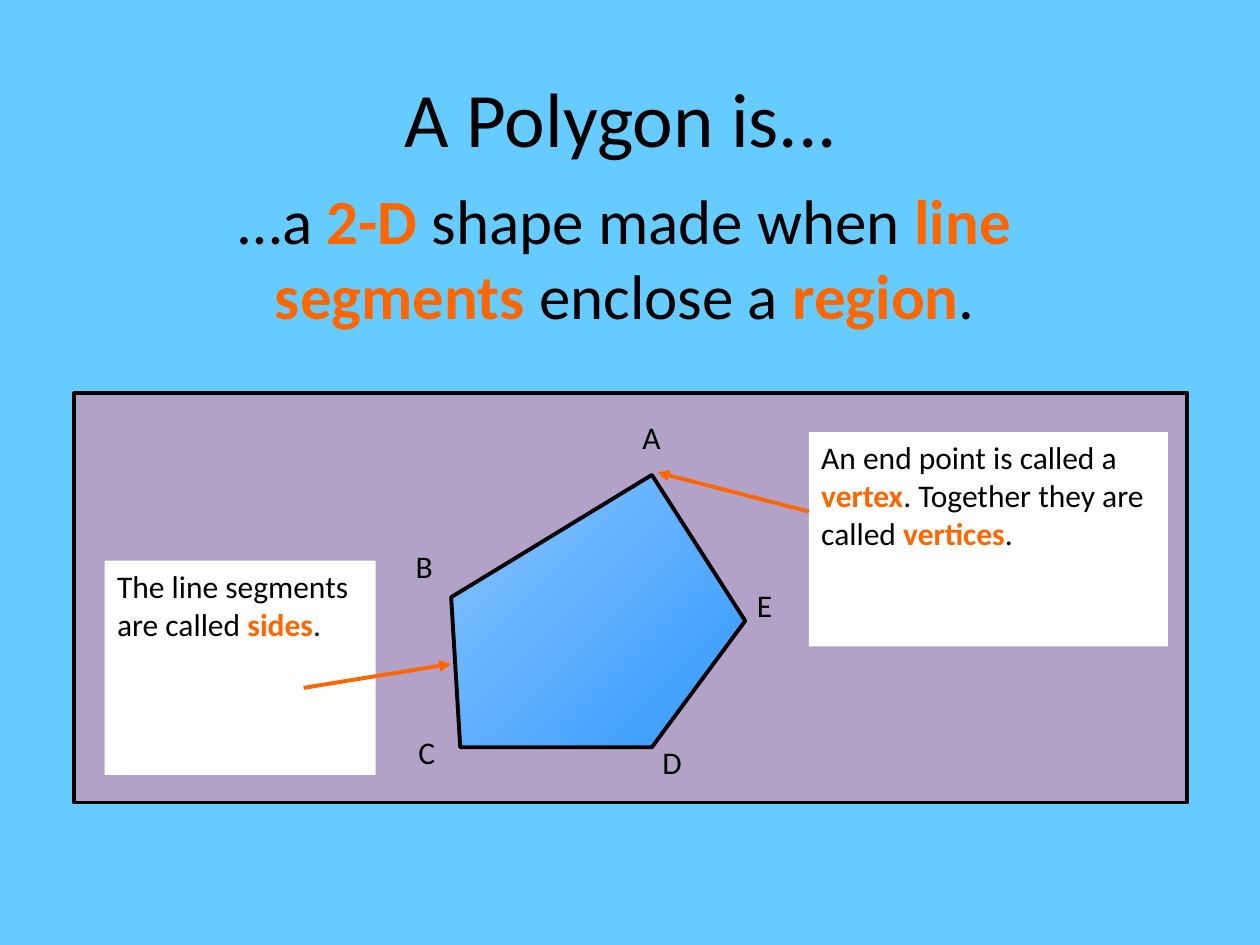
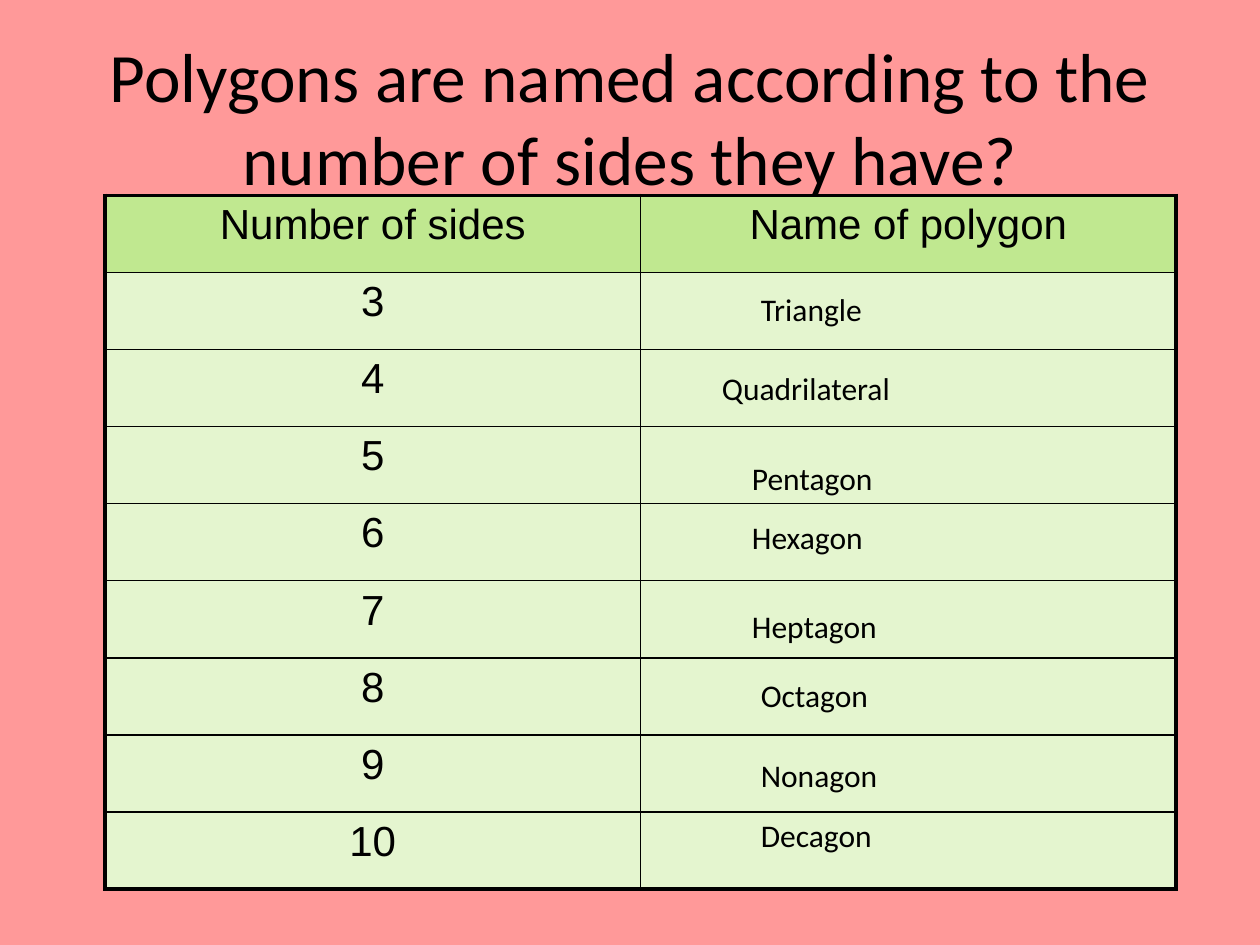
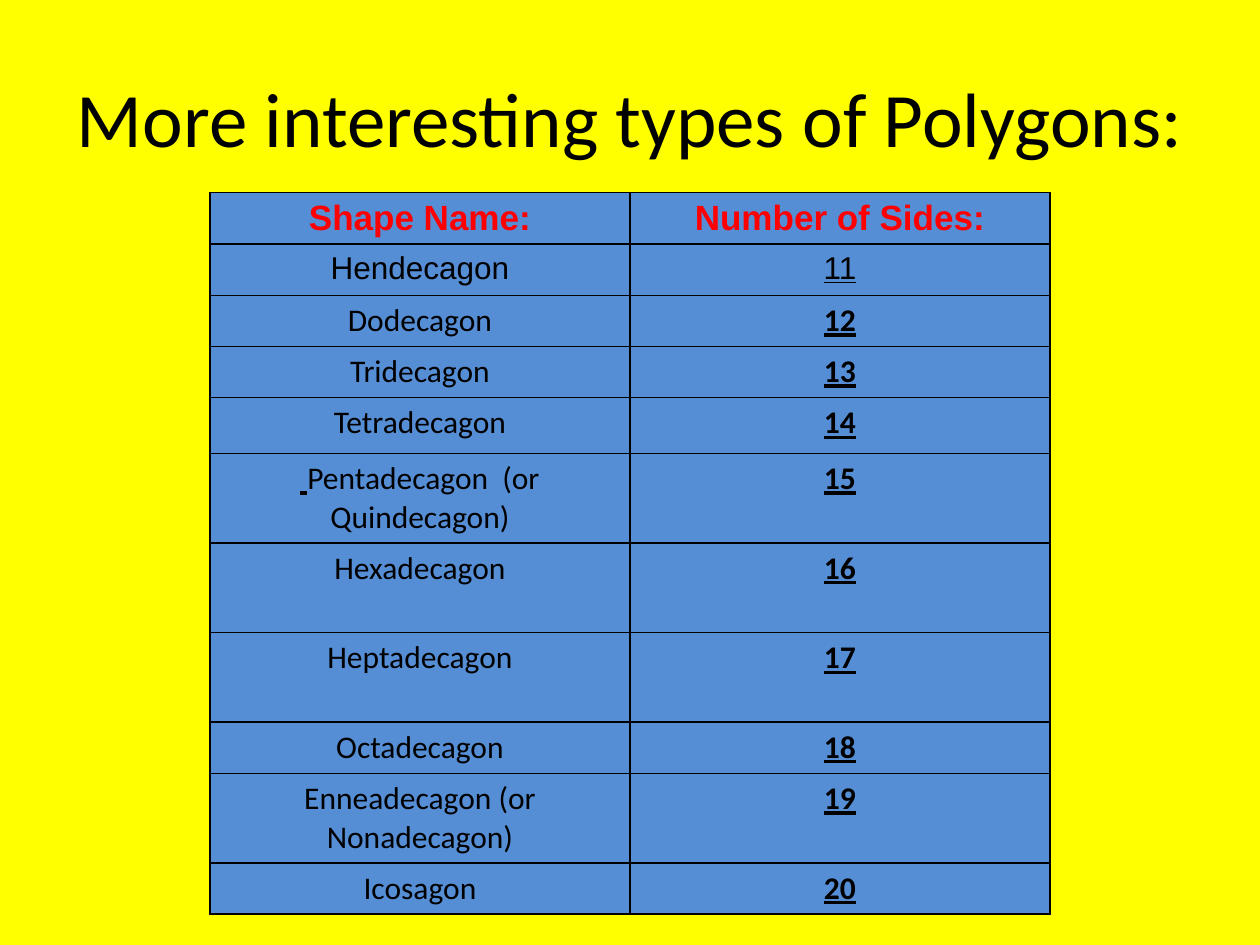
import pptx
import pptx.util
import pptx.dml.color
import pptx.enum.shapes
import pptx.enum.text
import pptx.oxml
import pptx.oxml.ns

Pt = pptx.util.Pt
CENTER = pptx.enum.text.PP_ALIGN.CENTER
LEFT = pptx.enum.text.PP_ALIGN.LEFT

COLORS = {
    "black": "000000", "white": "FFFFFF", "orange": "FF6600", "red": "FF0000",
    "sky": "66CCFF", "pink": "FF9999", "yellow": "FFFF00", "lilac": "B3A2C7",
    "polygon light": "8AC5FF", "polygon dark": "3399FF",
    "green": "C0E890", "pale green": "E4F5CF", "blue": "558ED5",
}
THIN, THICK = 1, 2.25


def rgb(name):
    return pptx.dml.color.RGBColor.from_string(COLORS[name])


def drawing_element(parent, tag, **attributes):
    element = pptx.oxml.parse_xml(f"<a:{tag} {pptx.oxml.ns.nsdecls('a')}/>")
    for key, value in attributes.items():
        element.set(key, str(value))
    parent.append(element)
    return element


class Deck:
    def __init__(self):
        self.presentation = pptx.Presentation()
        self.presentation.slide_width = Pt(720)
        self.presentation.slide_height = Pt(540)
        self.slide = None

    def new_slide(self, background, title, size=44):
        self.slide = self.presentation.slides.add_slide(self.presentation.slide_layouts[5])
        self.slide.background.fill.solid()
        self.slide.background.fill.fore_color.rgb = rgb(background)
        shape = self.slide.shapes.title
        shape.left, shape.top, shape.width, shape.height = Pt(36), Pt(21.6), Pt(648), Pt(90)
        self.fill_text(shape.text_frame, title, size, align=CENTER)
        shape.text_frame.vertical_anchor = pptx.enum.text.MSO_ANCHOR.MIDDLE

    def fill_text(self, text_frame, text, size=18, align=LEFT, wrap=True):
        """Set one paragraph; parts between asterisks are keywords."""
        text_frame.word_wrap = wrap
        text_frame.auto_size = pptx.enum.text.MSO_AUTO_SIZE.NONE
        paragraph = text_frame.paragraphs[0]
        paragraph.alignment = align
        for index, part in enumerate(text.split("*")):
            run = paragraph.add_run()
            run.text = part
            keyword = index % 2 == 1
            self.style(run, size, color="orange" if keyword else "black", bold=keyword)

    def style(self, run, size, font="Calibri", color="black", bold=False, underline=False):
        run.font.name, run.font.size = font, Pt(size)
        run.font.bold, run.font.underline = bold, underline
        run.font.color.rgb = rgb(color)

    def text(self, left, top, width, height, text, **options):
        shape = self.slide.shapes.add_textbox(Pt(left), Pt(top), Pt(width), Pt(height))
        self.fill_text(shape.text_frame, text, **options)

    def outline(self, shape, width):
        shape.line.color.rgb = rgb("black")
        shape.line.width = Pt(width)

    def box(self, left, top, width, height, fill, text=None, line=None):
        shape = self.slide.shapes.add_shape(
            pptx.enum.shapes.MSO_SHAPE.RECTANGLE, Pt(left), Pt(top), Pt(width), Pt(height))
        shape.shadow.inherit = False
        shape.fill.solid()
        shape.fill.fore_color.rgb = rgb(fill)
        if line:
            self.outline(shape, line)
        else:
            shape.line.fill.background()
        if text:
            self.fill_text(shape.text_frame, text)
            shape.text_frame.vertical_anchor = pptx.enum.text.MSO_ANCHOR.TOP

    def polygon(self, points):
        (start_x, start_y), *others = [(Pt(x), Pt(y)) for x, y in points]
        builder = self.slide.shapes.build_freeform(start_x, start_y)
        builder.add_line_segments(others, close=True)
        shape = builder.convert_to_shape()
        shape.shadow.inherit = False
        shape.fill.gradient()
        shape.fill.gradient_angle = 315
        for stop, color in zip(shape.fill.gradient_stops, ("polygon light", "polygon dark")):
            stop.color.rgb = rgb(color)
        self.outline(shape, THICK)

    def arrow(self, start_x, start_y, end_x, end_y):
        connector = self.slide.shapes.add_connector(
            pptx.enum.shapes.MSO_CONNECTOR.STRAIGHT,
            Pt(start_x), Pt(start_y), Pt(end_x), Pt(end_y))
        connector.line.color.rgb = rgb("orange")
        connector.line.width = Pt(THICK)
        properties = connector._element.spPr
        line = properties.find(pptx.oxml.ns.qn("a:ln"))
        drawing_element(line, "tailEnd", type="triangle")
        drawing_element(properties, "effectLst")

    def table(self, left, top, column_width, row_heights, column_count=2):
        shape = self.slide.shapes.add_table(
            len(row_heights), column_count, Pt(left), Pt(top),
            Pt(column_width * column_count), Pt(sum(row_heights)))
        table = shape.table
        table.first_row = table.horz_banding = False
        for column in table.columns:
            column.width = Pt(column_width)
        for row, height in zip(table.rows, row_heights):
            row.height = Pt(height)
        return table

    def cell(self, table, row, column, fill, text="", size=18, frame=THIN, **font):
        cell = table.cell(row, column)
        edges = {
            "lnL": column == 0, "lnR": column == len(table.columns) - 1,
            "lnT": row == 0, "lnB": row == len(table.rows) - 1,
        }
        properties = cell._tc.get_or_add_tcPr()
        for tag, outer in edges.items():
            border = drawing_element(properties, tag, w=int(Pt(frame if outer else THIN)))
            solid = drawing_element(border, "solidFill")
            drawing_element(solid, "srgbClr", val=COLORS["black"])
        cell.fill.solid()
        cell.fill.fore_color.rgb = rgb(fill)
        paragraph = cell.text_frame.paragraphs[0]
        paragraph.text = text
        paragraph.alignment = CENTER
        for run in paragraph.runs:
            self.style(run, size, **font)
        return paragraph


def polygon_definition(deck):
    deck.new_slide("sky", "A Polygon is... ")
    deck.box(42.5, 224.6, 636, 234, "lilac", line=THICK)
    deck.text(87.8, 100.1, 538.6, 94.3,
              "…a *2-D* shape made when *line segments* enclose a *region*.",
              size=36, align=CENTER)

    # Vertex labels
    for letter, left, top in (("A", 360, 235.4), ("B", 230.4, 309), ("C", 232, 415.4),
                              ("D", 371.5, 421.2), ("E", 425.5, 331.2)):
        deck.text(left, top, 31, 36, letter, wrap=False)

    # Explanations and arrows
    deck.box(59.8, 320.4, 154.8, 122.4, "white", "The line segments are called *sides*.")
    deck.arrow(173.5, 393.1, 257.8, 379.4)
    deck.box(462.2, 247, 205.2, 122.4, "white",
             "An end point is called a *vertex*. Together they are called *vertices*.")
    deck.arrow(462.2, 292.3, 375.8, 270)

    deck.polygon([(263, 427), (372.5, 427), (425.8, 354.8), (372.5, 271.4), (257.8, 341.3)])


def polygon_names(deck):
    deck.new_slide("pink", "Polygons are named according to the number of sides they have?", 39.6)

    # Table of side counts
    first_column = ["Number of sides"] + [str(sides) for sides in range(3, 11)]
    table = deck.table(60, 111.6, 306, [44.06] * len(first_column))
    for row, label in enumerate(first_column):
        texts = (label, "Name of polygon" if row == 0 else "")
        for column, text in enumerate(texts):
            deck.cell(table, row, column, "pale green" if row else "green", text,
                      size=24, frame=THICK, font="Arial")

    # Names laid over the second column
    for name, left, top in (
            ("Triangle", 427.7, 162), ("Quadrilateral", 405.4, 207.4),
            ("Pentagon", 422.6, 258.5), ("Hexagon", 422.6, 292.3),
            ("Heptagon", 422.6, 343.4), ("Octagon", 427.7, 383),
            ("Nonagon", 427.7, 428.4), ("Decagon", 427.7, 463)):
        deck.text(left, top, 165, 29, name)


def more_polygons(deck):
    deck.new_slide("yellow", "More interesting types of Polygons:")
    names = ["Hendecagon", "Dodecagon", "Tridecagon", "Tetradecagon",
             "Pentadecagon  (or Quindecagon)", "Hexadecagon", "Heptadecagon",
             "Octadecagon", "Enneadecagon (or Nonadecagon)", "Icosagon"]
    single, double = 29.2, 51.2
    heights = [single] * 4 + [32] + [double] * 3 + [single, double, single]
    table = deck.table(120, 110, 240, heights)

    for column, heading in enumerate(("Shape Name:", "Number of Sides:")):
        deck.cell(table, 0, column, "blue", heading, size=20,
                  font="Arial", color="red", bold=True)
    for row, name in enumerate(names, start=1):
        sides = row + 10
        font = "Arial" if row == 1 else "Calibri"
        # The fifteen-sided name starts with an underlined, bold space
        lead = sides == 15
        paragraph = deck.cell(table, row, 0, "blue", " " if lead else name,
                              font=font, bold=lead, underline=lead)
        if lead:
            run = paragraph.add_run()
            run.text = name
            deck.style(run, 18)
        deck.cell(table, row, 1, "blue", str(sides), font=font,
                  bold=row > 1, underline=True)


def main():
    deck = Deck()
    polygon_definition(deck)
    polygon_names(deck)
    more_polygons(deck)
    deck.presentation.save("out.pptx")


if __name__ == "__main__":
    main()
